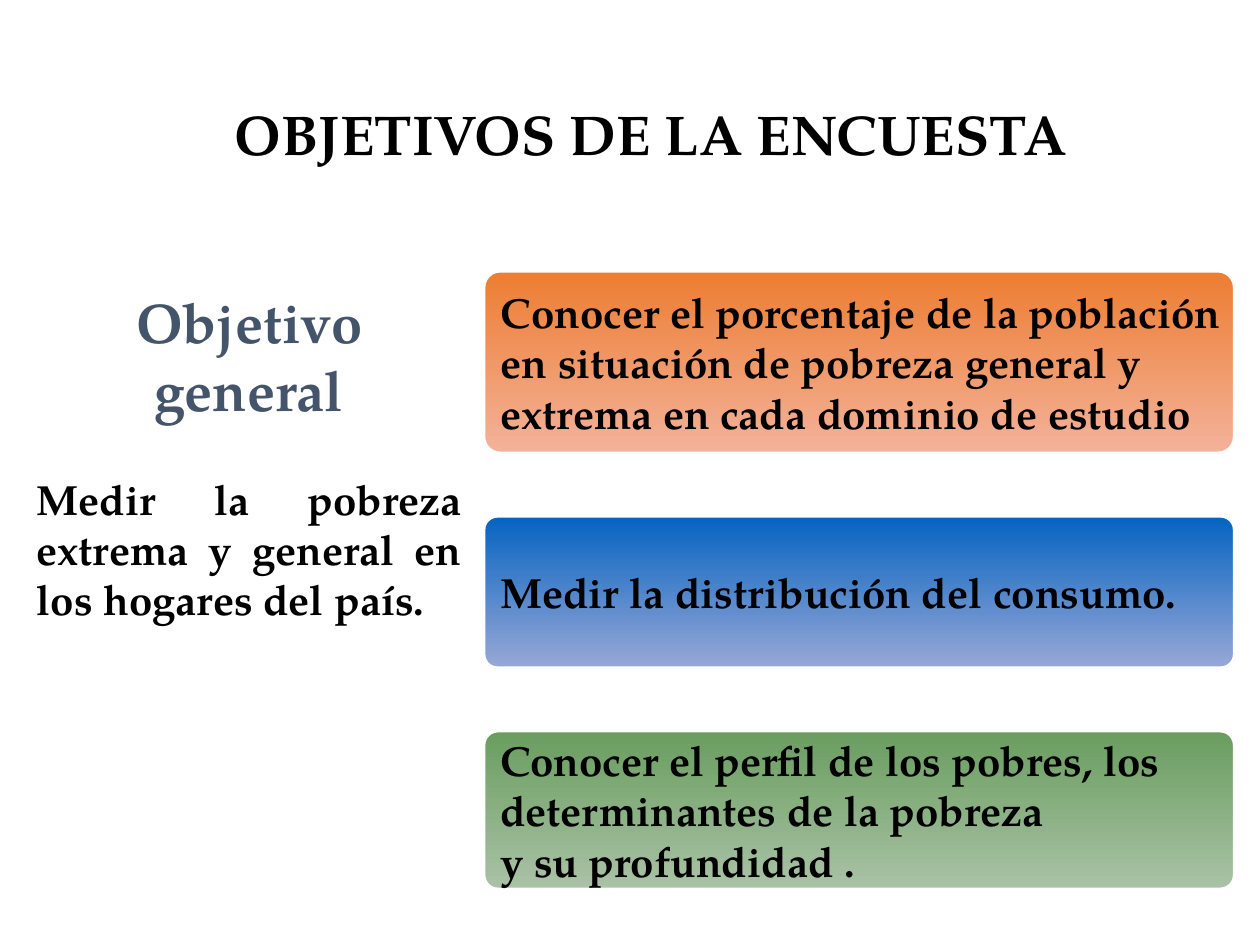
from dataclasses import dataclass

import pptx
import pptx.dml.color
import pptx.enum.shapes
import pptx.enum.text
import pptx.util
from pptx.util import Cm

FONT = "TeX Gyre Pagella"
ALIGN = pptx.enum.text.PP_ALIGN
MIDDLE = pptx.enum.text.MSO_ANCHOR.MIDDLE
CORNER = 0.091
COLOURS = {
    "text": "000000",
    "heading": "44546A",
    "outline": "FFFFFF",
    "orange": "ED7D31",
    "orange_light": "F3B29B",
    "blue": "0563C1",
    "blue_light": "98A8D6",
    "green": "699D5F",
    "green_light": "AAC2A6",
}
BOX_LEFT, BOX_TOP, BOX_WIDTH, BOX_GAP = 9.75, 5.46, 15.14, 1.26


@dataclass
class Objective:
    lines: list[str]
    colour: str
    height: float
    last_alignment: ALIGN = ALIGN.JUSTIFY


OBJECTIVES = [
    Objective(
        [
            "Conocer el porcentaje de la población ",
            "en situación de pobreza general y",
            "extrema en cada dominio de estudio",
        ],
        "orange",
        3.68,
    ),
    Objective(["Medir la distribución del consumo."], "blue", 3.07),
    Objective(
        [
            "Conocer el perfil de los pobres, los ",
            "determinantes de la pobreza ",
            "y su profundidad .",
        ],
        "green",
        3.2,
        ALIGN.LEFT,
    ),
]


def rgb(name: str) -> pptx.dml.color.RGBColor:
    return pptx.dml.color.RGBColor.from_string(COLOURS[name])


def format_paragraph(paragraph, size: int, alignment: ALIGN, colour: str = "text") -> None:
    paragraph.alignment = alignment
    for run in paragraph.runs:
        run.font.name = FONT
        run.font.size = pptx.util.Pt(size)
        run.font.bold = True
        run.font.color.rgb = rgb(colour)


def add_rounded_box(slide, left: float, top: float, width: float, height: float):
    """Add a rounded rectangle, measured in centimetres, with centred anchoring."""
    shape = slide.shapes.add_shape(
        pptx.enum.shapes.MSO_SHAPE.ROUNDED_RECTANGLE,
        Cm(left), Cm(top), Cm(width), Cm(height),
    )
    shape.adjustments[0] = CORNER
    shape.shadow.inherit = False
    shape.text_frame.vertical_anchor = MIDDLE
    return shape


def add_objective(slide, objective: Objective, top: float) -> None:
    shape = add_rounded_box(slide, BOX_LEFT, top, BOX_WIDTH, objective.height)
    shape.fill.gradient()
    shape.fill.gradient_angle = 270
    stops = shape.fill.gradient_stops
    for stop, position, suffix in zip(stops, (0, 1), ("", "_light")):
        stop.position = position
        stop.color.rgb = rgb(objective.colour + suffix)
    shape.line.color.rgb = rgb("outline")
    shape.line.width = pptx.util.Pt(2)

    text_frame = shape.text_frame
    text_frame.word_wrap = False
    text_frame.text = "\n".join(objective.lines)
    for paragraph in text_frame.paragraphs:
        format_paragraph(paragraph, 24, ALIGN.JUSTIFY)
    text_frame.paragraphs[-1].alignment = objective.last_alignment


def add_general_objective(slide) -> None:
    shape = add_rounded_box(slide, 0.3, 5.51, 9.45, 7.37)
    shape.fill.background()
    shape.line.fill.background()
    text_frame = shape.text_frame
    text_frame.word_wrap = True
    text_frame.text = (
        "Objetivo general\n"
        "Medir la pobreza extrema y general en los hogares del país."
    )
    heading, body = text_frame.paragraphs
    format_paragraph(heading, 32, ALIGN.CENTER, "heading")
    format_paragraph(body, 24, ALIGN.JUSTIFY)
    body.space_before = pptx.util.Pt(29)


def set_title(slide) -> None:
    title = slide.shapes.title
    title.left, title.top = Cm(1.7), Cm(1.09)
    title.width, title.height = Cm(22.86), Cm(3.18)
    title.text_frame.text = "OBJETIVOS DE LA ENCUESTA"
    title.text_frame.vertical_anchor = MIDDLE
    format_paragraph(title.text_frame.paragraphs[0], 32, ALIGN.CENTER)


def main() -> None:
    presentation = pptx.Presentation()
    presentation.slide_width, presentation.slide_height = Cm(25.4), Cm(19.05)
    slide = presentation.slides.add_slide(presentation.slide_layouts[5])
    set_title(slide)
    top = BOX_TOP
    for objective in OBJECTIVES:
        add_objective(slide, objective, top)
        top += objective.height + BOX_GAP
    add_general_objective(slide)
    presentation.save("out.pptx")


if __name__ == "__main__":
    main()
